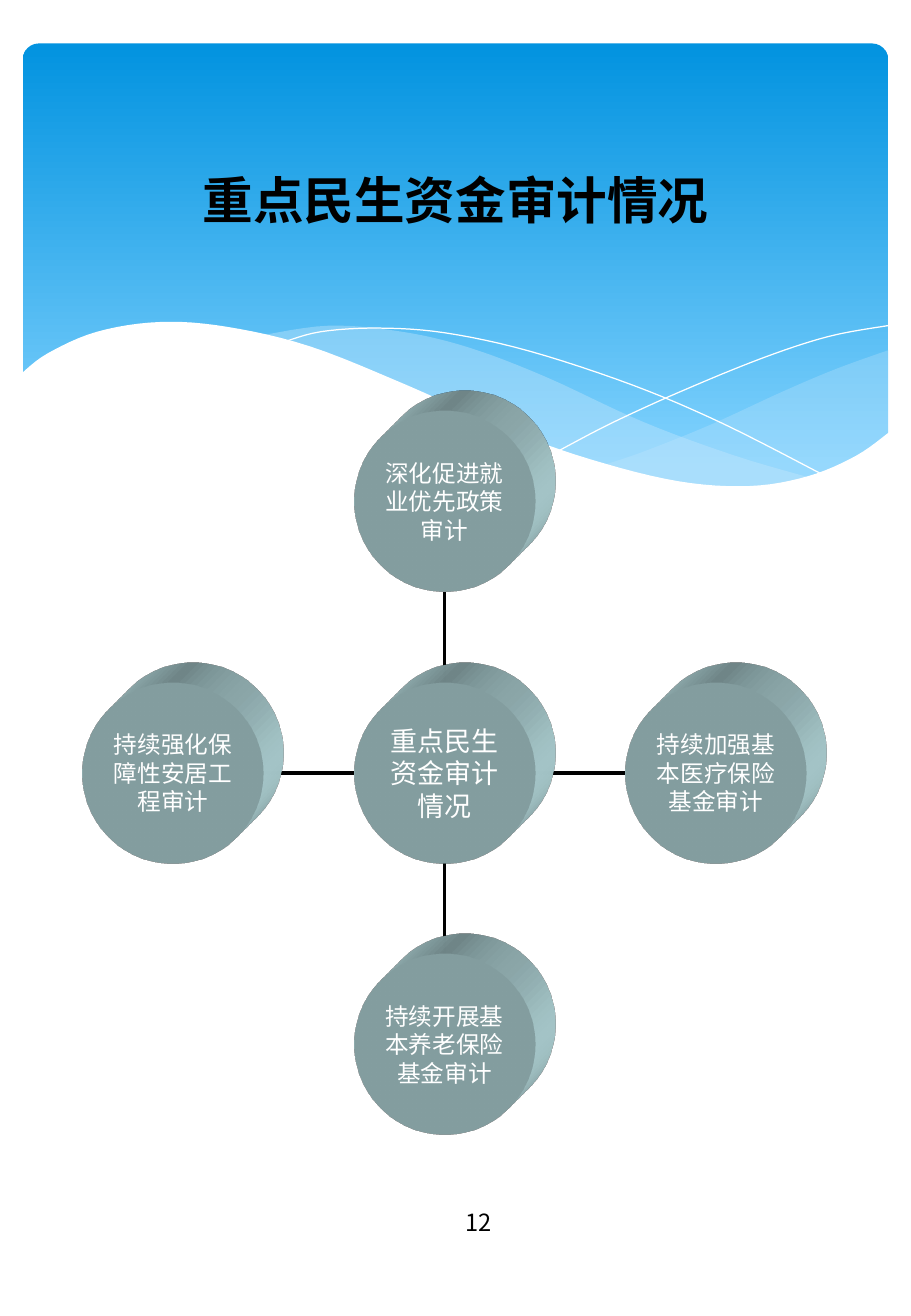
from lxml.etree import SubElement
from pptx import Presentation
from pptx.dml.color import RGBColor
from pptx.enum.shapes import MSO_CONNECTOR as Connector, MSO_SHAPE as Shape
from pptx.enum.text import MSO_ANCHOR as Anchor, PP_ALIGN as Align
from pptx.oxml import parse_xml
from pptx.oxml.ns import nsdecls, qn
from pptx.util import Inches, Pt

WIDTH, HEIGHT = Inches(7.5), Inches(10.83)
FONT = "Noto Sans CJK SC"
COLORS = {"sky": "0293E0", "haze": "83D3FE", "mist": "C6E7FC", "disc": "BBE0E3",
          "white": "FFFFFF", "black": "000000"}
DISC = Inches(1.49)
PITCH = DISC * 1.5
HUB_X, HUB_Y = Inches(3.66), Inches(6.36)
HUB = "重点民生资金审计情况"
SPOKES = [(-1, 0, "持续强化保障性安居工程审计"), (0, 1, "持续开展基本养老保险基金审计"),
          (1, 0, "持续加强基本医疗保险基金审计"), (0, -1, "深化促进就业优先政策审计")]

RIGHT_SWELL = [(7.32, 2.88), (6.9, 3.03), (6.45, 3.22), (5.84, 3.5), (5.29, 3.72), (4.96, 3.83)]
RIGHT_BASE = [(4.96, 3.83), (5.39, 3.94), (5.77, 4), (6.18, 4.01), (6.6, 3.94), (6.96, 3.81),
              (7.32, 3.57)]
MIDDLE_TOP = [(6.7, 3.94), (6.05, 3.75), (5.29, 3.47), (4.49, 3.1), (3.86, 2.86), (3.31, 2.73),
              (2.71, 2.68), (2.15, 2.76)]
MIDDLE_BASE = [(2.15, 2.76), (2.72, 2.93), (3.37, 3.2), (4.25, 3.59), (4.99, 3.85),
               (5.61, 3.98), (6.13, 4.02), (6.7, 3.94)]
FALLING_LINE = [(2.32, 2.82), (2.64, 2.73), (3.12, 2.7), (3.67, 2.74), (4.36, 2.89),
                (5.21, 3.17), (5.96, 3.49), (6.8, 3.92)]
RISING_LINE = [(4.6, 3.71), (5.04, 3.48), (5.61, 3.22), (6.27, 2.95), (6.82, 2.77), (7.31, 2.68)]
FRONT_CREST = [(7.33, 3.55), (7.05, 3.75), (6.65, 3.92), (6.17, 4), (5.58, 3.96), (4.86, 3.78),
               (4.16, 3.53), (3.35, 3.17), (2.55, 2.85), (1.87, 2.69), (1.32, 2.65),
               (0.8, 2.73), (0.39, 2.91), (0.17, 3.08)]
FRONT_BASE = [(0.17, 4.75), (7.33, 4.75)]


def rgb(name):
    return RGBColor.from_string(COLORS[name])


def smooth(knots, steps=6):
    padded = [knots[0], *knots, knots[-1]]
    curve = [knots[0]]
    for a, b, c, d in zip(padded, padded[1:], padded[2:], padded[3:]):
        for step in range(1, steps + 1):
            t = step / steps
            curve.append(tuple(
                q + t * (r - p) / 2 + t**2 * (2 * p - 5 * q + 4 * r - s) / 2
                + t**3 * (3 * q - p - 3 * r + s) / 2
                for p, q, r, s in zip(a, b, c, d)))
    return curve


def write(shape, text, size, color="black", bold=False, anchor=Anchor.MIDDLE, margins=(0, 0)):
    frame = shape.text_frame
    frame.word_wrap = True
    frame.vertical_anchor = anchor
    frame.margin_left = frame.margin_right = Inches(margins[0])
    frame.margin_top = frame.margin_bottom = Inches(margins[1])
    paragraph = frame.paragraphs[0]
    paragraph.alignment = Align.CENTER
    run = paragraph.add_run()
    run.text = text
    run.font.size, run.font.bold, run.font.name = Pt(size), bold, FONT
    run.font.color.rgb = rgb(color)
    SubElement(run.font._element, qn("a:ea")).set("typeface", FONT)


def add_sky(slide):
    sky = slide.shapes.add_shape(Shape.ROUNDED_RECTANGLE, round(WIDTH * 0.025),
                                 round(HEIGHT * 0.033), round(WIDTH * 0.95), round(HEIGHT * 0.36))
    sky.adjustments[0] = 0.034
    sky.shadow.inherit = False
    sky.line.fill.background()
    sky.fill.gradient()
    sky.fill.gradient_angle = 270
    for stop, color, position in zip(sky.fill.gradient_stops, ("sky", "haze"), (0, 0.9)):
        stop.color.rgb, stop.position = rgb(color), position


def add_wave(slide, outline, fill=None, opacity=100):
    points = [(Inches(x), Inches(y)) for x, y in outline]
    builder = slide.shapes.build_freeform(*points[0])
    builder.add_line_segments(points[1:], close=fill is not None)
    wave = builder.convert_to_shape()
    wave.shadow.inherit = False
    if fill is None:
        wave.fill.background()
        wave.line.color.rgb, wave.line.width = rgb("white"), Pt(0)
        return
    wave.line.fill.background()
    wave.fill.solid()
    wave.fill.fore_color.rgb = rgb(fill)
    if opacity < 100:
        tint = wave._element.spPr.find(qn("a:solidFill"))[0]
        SubElement(tint, qn("a:alpha")).set("val", str(opacity * 1000))


def add_disc(slide, column, row, text, size):
    disc = slide.shapes.add_shape(Shape.OVAL, round(HUB_X + column * PITCH - DISC / 2),
                                  round(HUB_Y + row * PITCH - DISC / 2), DISC, DISC)
    disc.shadow.inherit = False
    disc.fill.solid()
    disc.fill.fore_color.rgb = rgb("disc")
    disc.line.fill.background()
    scene = (f'<a:scene3d {nsdecls("a")}><a:camera prst="legacyObliqueTopRight"/>'
             '<a:lightRig rig="legacyFlat3" dir="b"/></a:scene3d>')
    depth = (f'<a:sp3d {nsdecls("a")} extrusionH="430200" prstMaterial="legacyMatte">'
             '<a:bevelT w="13500" h="13500" prst="angle"/>'
             '<a:bevelB w="13500" h="13500" prst="angle"/>'
             f'<a:extrusionClr><a:srgbClr val="{COLORS["disc"]}"/></a:extrusionClr></a:sp3d>')
    for part in (scene, depth):
        disc._element.spPr.append(parse_xml(part))
    write(disc, text, size, color="white")


def add_spoke(slide, column, row):
    near, far = DISC / 2, PITCH - DISC / 2
    spoke = slide.shapes.add_connector(
        Connector.STRAIGHT, round(HUB_X + column * near), round(HUB_Y + row * near),
        round(HUB_X + column * far), round(HUB_Y + row * far))
    spoke.line.color.rgb, spoke.line.width = rgb("black"), Pt(2.25)
    SubElement(spoke._element.spPr, qn("a:effectLst"))


def add_label(slide, left, top, width, height, text, size, **style):
    box = slide.shapes.add_textbox(round(WIDTH * left), round(HEIGHT * top),
                                   round(WIDTH * width), round(HEIGHT * height))
    write(box, text, size, margins=(0.1, 0.05), **style)


def main():
    """Build the audit overview slide and save it."""
    deck = Presentation()
    deck.slide_width, deck.slide_height = WIDTH, HEIGHT
    slide = deck.slides.add_slide(deck.slide_layouts[6])
    add_sky(slide)
    add_wave(slide, smooth(RIGHT_SWELL) + smooth(RIGHT_BASE), "mist", 29)
    add_wave(slide, smooth(MIDDLE_TOP) + smooth(MIDDLE_BASE), "mist", 40)
    add_wave(slide, smooth(FALLING_LINE))
    add_wave(slide, smooth(RISING_LINE))
    add_wave(slide, smooth(FRONT_CREST) + FRONT_BASE, "white")
    add_label(slide, 0.05, 0.124, 0.9, 0.056, HUB, 30, bold=True, anchor=Anchor.TOP)
    add_label(slide, 0.44, 0.893, 0.17, 0.071, "12", 14)
    for column, row, topic in SPOKES:
        add_spoke(slide, column, row)
        add_disc(slide, column, row, topic, 14)
    add_disc(slide, 0, 0, HUB, 16)
    deck.save("out.pptx")


if __name__ == "__main__":
    main()
